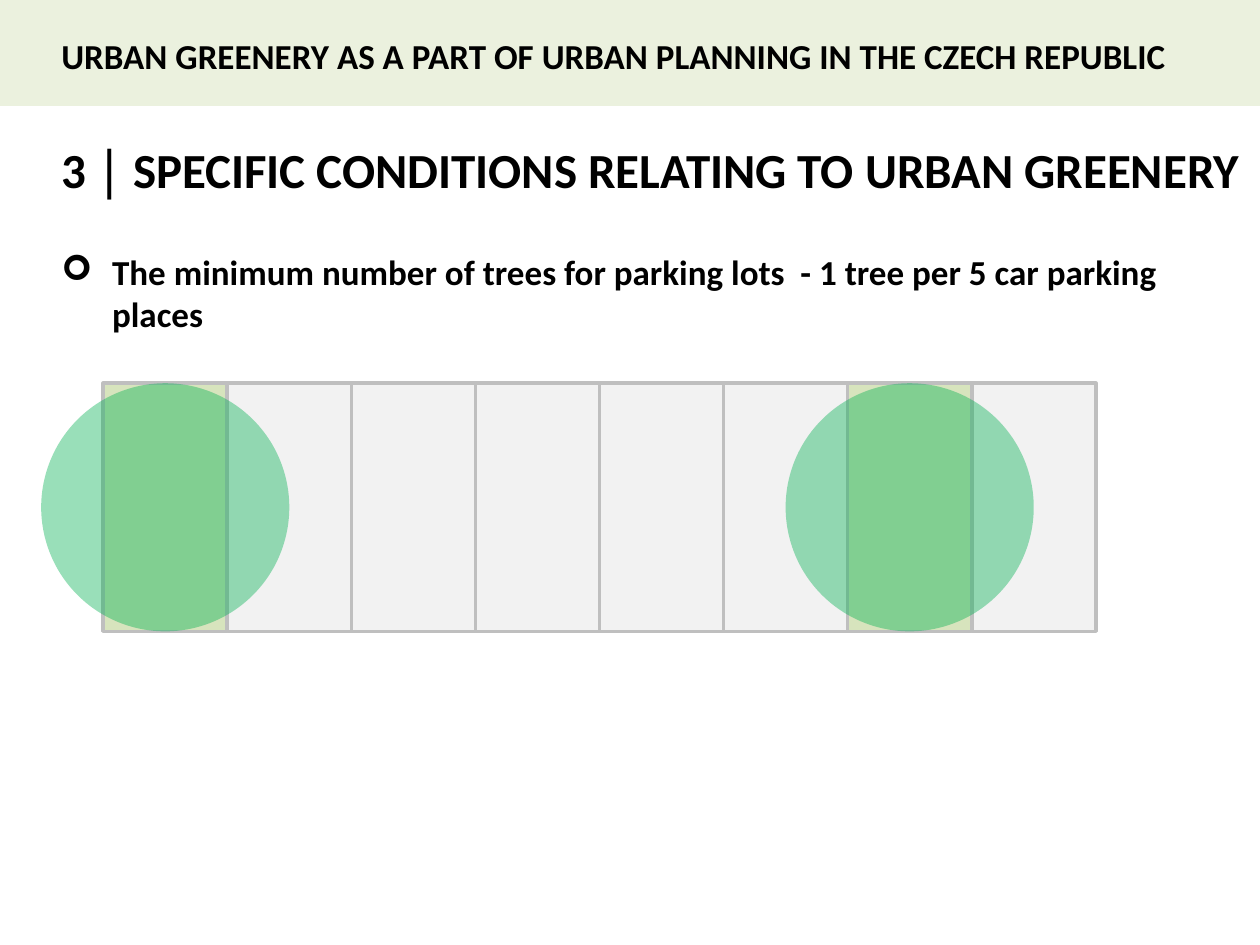
from pptx import Presentation
from pptx.dml.color import RGBColor
from pptx.enum.shapes import MSO_SHAPE
from pptx.enum.text import MSO_ANCHOR, MSO_AUTO_SIZE, PP_ALIGN
from pptx.oxml.ns import qn
from pptx.util import Pt
from lxml.etree import SubElement

BLACK = RGBColor(0x00, 0x00, 0x00)
BAND_GREEN = RGBColor(0xEB, 0xF1, 0xDE)
PLANTED_GREEN = RGBColor(0xD7, 0xE4, 0xBD)
PARKING_GREY = RGBColor(0xF2, 0xF2, 0xF2)
OUTLINE_GREY = RGBColor(0xBF, 0xBF, 0xBF)
TREE_GREEN = RGBColor(0x00, 0xB0, 0x50)

SLIDE_WIDTH, SLIDE_HEIGHT = 720, 540
BAY_LEFT, BAY_TOP = 59, 219
BAY_WIDTH, BAY_HEIGHT = 70.9, 141.8
BAY_COUNT = 8
PLANTED_BAYS = (0, 6)


class SlideBuilder:
    """Holds the text style and the current slide; lengths are in points."""

    font_name = "Calibri"

    def __init__(self, slide):
        self.slide = slide

    def set_text(self, frame, text, size, margin, indent=0, bullet=None,
                 anchor=MSO_ANCHOR.MIDDLE):
        frame.word_wrap = True
        frame.auto_size = MSO_AUTO_SIZE.NONE
        frame.vertical_anchor = anchor
        paragraph = frame.paragraphs[0]
        paragraph.text = text
        paragraph.alignment = PP_ALIGN.LEFT
        properties = paragraph._p.get_or_add_pPr()
        properties.set("marL", str(Pt(margin)))
        properties.set("indent", str(Pt(indent)))
        if bullet:
            SubElement(properties, qn("a:buFont"), typeface="Wingdings")
            SubElement(properties, qn("a:buChar"), char=bullet)
        font = paragraph.font
        font.name, font.size, font.bold = self.font_name, Pt(size), True
        font.color.rgb = BLACK

    def shape(self, kind, left, top, width, height, fill, outline=None, opacity=None):
        shape = self.slide.shapes.add_shape(
            kind, Pt(left), Pt(top), Pt(width), Pt(height))
        shape.shadow.inherit = False
        shape.fill.solid()
        shape.fill.fore_color.rgb = fill
        if outline is None:
            shape.line.fill.background()
        else:
            shape.line.color.rgb = outline
            shape.line.width = Pt(2)
        if opacity is not None:
            color = shape._element.spPr.find(qn("a:solidFill")).find(qn("a:srgbClr"))
            SubElement(color, qn("a:alpha"), val=str(opacity * 1000))
        return shape

    def band(self, text, height):
        band = self.shape(MSO_SHAPE.RECTANGLE, 0, 0, SLIDE_WIDTH, height, BAND_GREEN)
        band.text_frame.margin_top = Pt(6)
        self.set_text(band.text_frame, text, 20, 28)

    def title(self, text, top, height):
        title = self.slide.shapes.title
        title.left, title.top = Pt(0), Pt(top)
        title.width, title.height = Pt(SLIDE_WIDTH), Pt(height)
        self.set_text(title.text_frame, text, 28, 57, -29)

    def bullet(self, text, top, height):
        box = self.slide.shapes.add_textbox(
            Pt(0), Pt(top), Pt(SLIDE_WIDTH), Pt(height))
        self.set_text(box.text_frame, text, 20, 57, -29, "➢", MSO_ANCHOR.TOP)

    def bay(self, index):
        fill = PLANTED_GREEN if index in PLANTED_BAYS else PARKING_GREY
        self.shape(MSO_SHAPE.RECTANGLE, BAY_LEFT + index * BAY_WIDTH, BAY_TOP,
                   BAY_WIDTH, BAY_HEIGHT, fill, OUTLINE_GREY)

    def tree(self, index):
        """Centre a tree crown, as wide as a bay is long, on the given bay."""
        center = BAY_LEFT + (index + 0.5) * BAY_WIDTH
        self.shape(MSO_SHAPE.OVAL, center - BAY_HEIGHT / 2, BAY_TOP,
                   BAY_HEIGHT, BAY_HEIGHT, TREE_GREEN, opacity=40)


def main():
    presentation = Presentation()
    presentation.slide_width = Pt(SLIDE_WIDTH)
    presentation.slide_height = Pt(SLIDE_HEIGHT)
    builder = SlideBuilder(
        presentation.slides.add_slide(presentation.slide_layouts[5]))

    builder.band("URBAN GREENERY AS A PART OF URBAN PLANNING IN THE CZECH REPUBLIC", 60.5)
    builder.title("3 │ SPECIFIC CONDITIONS RELATING TO URBAN GREENERY", 70.5, 52)
    builder.bullet("The minimum number of trees for parking lots  - "
                   "1 tree per 5 car parking places", 139.7, 60)
    for index in range(BAY_COUNT):
        builder.bay(index)
    for index in PLANTED_BAYS:
        builder.tree(index)

    presentation.save("out.pptx")


if __name__ == "__main__":
    main()
